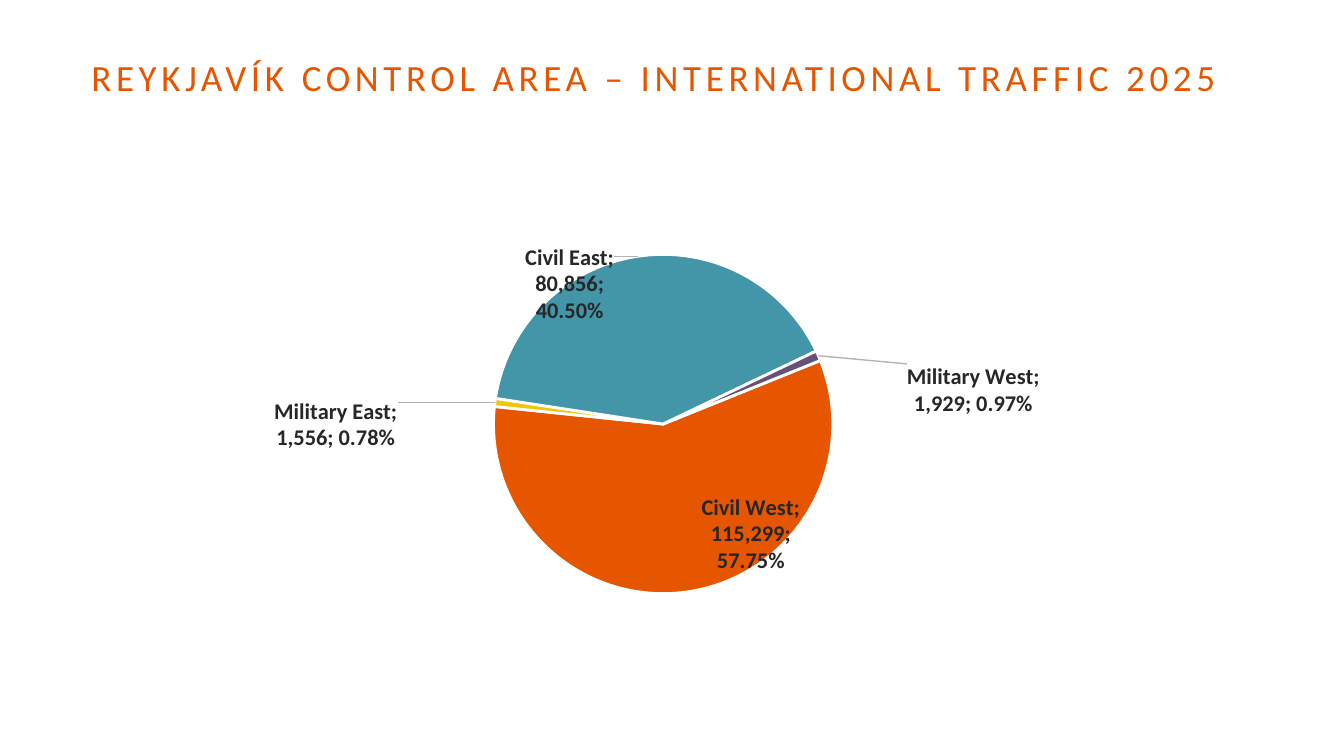
import copy
import lxml.etree
import pptx
import pptx.chart.data
import pptx.dml.color
import pptx.enum.chart
import pptx.enum.text
import pptx.oxml.ns
import pptx.util


def color(value):
    return pptx.dml.color.RGBColor.from_string(value)


def add_element(parent, tag, **attributes):
    return lxml.etree.SubElement(parent, pptx.oxml.ns.qn(tag), attributes)


presentation = pptx.Presentation()
presentation.slide_width = pptx.util.Inches(10)
presentation.slide_height = presentation.slide_width * 9 // 16
width, height = presentation.slide_width, presentation.slide_height
slide = presentation.slides.add_slide(presentation.slide_layouts[6])
left = int(width * 0.068)

title = slide.shapes.add_textbox(left, int(height * 0.039), int(width * 0.857), int(height * 0.119))
frame_format = {
    "word_wrap": True,
    "vertical_anchor": pptx.enum.text.MSO_ANCHOR.MIDDLE,
    "margin_left": 0, "margin_right": 0, "margin_top": 0, "margin_bottom": 0,
}
for name, value in frame_format.items():
    setattr(title.text_frame, name, value)
paragraph = title.text_frame.paragraphs[0]
paragraph.line_spacing = pptx.util.Pt(26)
run = paragraph.add_run()
run.text = "REYKJAVÍK CONTROL AREA – INTERNATIONAL TRAFFIC 2025"
run.font.name = "Calibri"
run.font.size = pptx.util.Pt(19.8)
run.font.color.rgb = color("E65500")
run.font._element.set("spc", "250")

slices = [
    ("Civil West", 115299, "E65500", 0.1, -0.02),
    ("Military East", 1556, "F0C80A", -0.2, -0.01),
    ("Civil East", 80856, "4396A7", -0.1, -0.04),
    ("Military West", 1929, "655277", 0.2, 0.01),
]
data = pptx.chart.data.CategoryChartData(number_format="#,##0")
data.categories = [item[0] for item in slices]
data.add_series("Series 1", [item[1] for item in slices])
chart = slide.shapes.add_chart(
    pptx.enum.chart.XL_CHART_TYPE.PIE, left, int(height * 0.231),
    int(width * 0.851), int(height * 0.66), data).chart
chart.has_title = False
chart.has_legend = False
plot = chart.plots[0]
plot.vary_by_categories = True
series = plot.series[0]
labels = series.data_labels
label_format = {
    "show_value": True, "show_percentage": True, "show_category_name": True,
    "number_format": "0.00%", "number_format_is_linked": False,
    "position": pptx.enum.chart.XL_LABEL_POSITION.INSIDE_END,
}
for name, value in label_format.items():
    setattr(labels, name, value)
for font, size, bold in ((chart.font, 10, False), (labels.font, 12, True)):
    font_format = {"name": "Calibri", "size": pptx.util.Pt(size), "bold": bold}
    for name, value in font_format.items():
        setattr(font, name, value)
    font.color.rgb = color("272727")

label_group = labels._element
for leader in label_group.findall(pptx.oxml.ns.qn("c:showLeaderLines")):
    label_group.remove(leader)
add_element(label_group, "c:separator").text = "; "
shared_settings = list(label_group)
extension_namespace = "http://schemas.microsoft.com/office/drawing/2012/chart"
for index, (category, amount, fill, shift_x, shift_y) in enumerate(slices):
    point = series.points[index]
    point.format.fill.solid()
    point.format.fill.fore_color.rgb = color(fill)
    point.format.line.color.rgb = color("FFFFFF")
    point.format.line.width = pptx.util.Pt(1.5)
    label = add_element(label_group, "c:dLbl")
    add_element(label, "c:idx", val=str(index))
    layout = add_element(add_element(label, "c:layout"), "c:manualLayout")
    add_element(layout, "c:x", val=str(shift_x))
    add_element(layout, "c:y", val=str(shift_y))
    label.extend(copy.deepcopy(shared_settings))
    extension = add_element(add_element(label, "c:extLst"), "c:ext",
                            uri="{CE6537A1-D6FC-4f65-9D91-7224C49458BB}")
    label_size = lxml.etree.SubElement(
        extension, "{" + extension_namespace + "}layout", nsmap={"c15": extension_namespace})
    size_layout = add_element(label_size, "c:manualLayout")
    add_element(size_layout, "c:w", val="0.18")
    add_element(size_layout, "c:h", val="0.14")
    label_group.insert(index, label)
add_element(label_group, "c:showLeaderLines", val="1")
leader_format = add_element(add_element(label_group, "c:leaderLines"), "c:spPr")
leader_line = add_element(leader_format, "a:ln", w="9525")
add_element(add_element(leader_line, "a:solidFill"), "a:srgbClr", val="B3B3B3")

pie = plot._element
for angle in pie.findall(pptx.oxml.ns.qn("c:firstSliceAng")):
    pie.remove(angle)
add_element(pie, "c:firstSliceAng", val="68")
plot_area = pie.getparent()
for old_layout in plot_area.findall(pptx.oxml.ns.qn("c:layout")):
    plot_area.remove(old_layout)
area_layout = add_element(plot_area, "c:layout")
plot_area.insert(0, area_layout)
manual = add_element(area_layout, "c:manualLayout")
for tag, value in (("layoutTarget", "inner"), ("xMode", "edge"), ("yMode", "edge"),
                   ("x", "0.35"), ("y", "0.16"), ("w", "0.3"), ("h", "0.68")):
    add_element(manual, "c:" + tag, val=value)

presentation.save("out.pptx")
